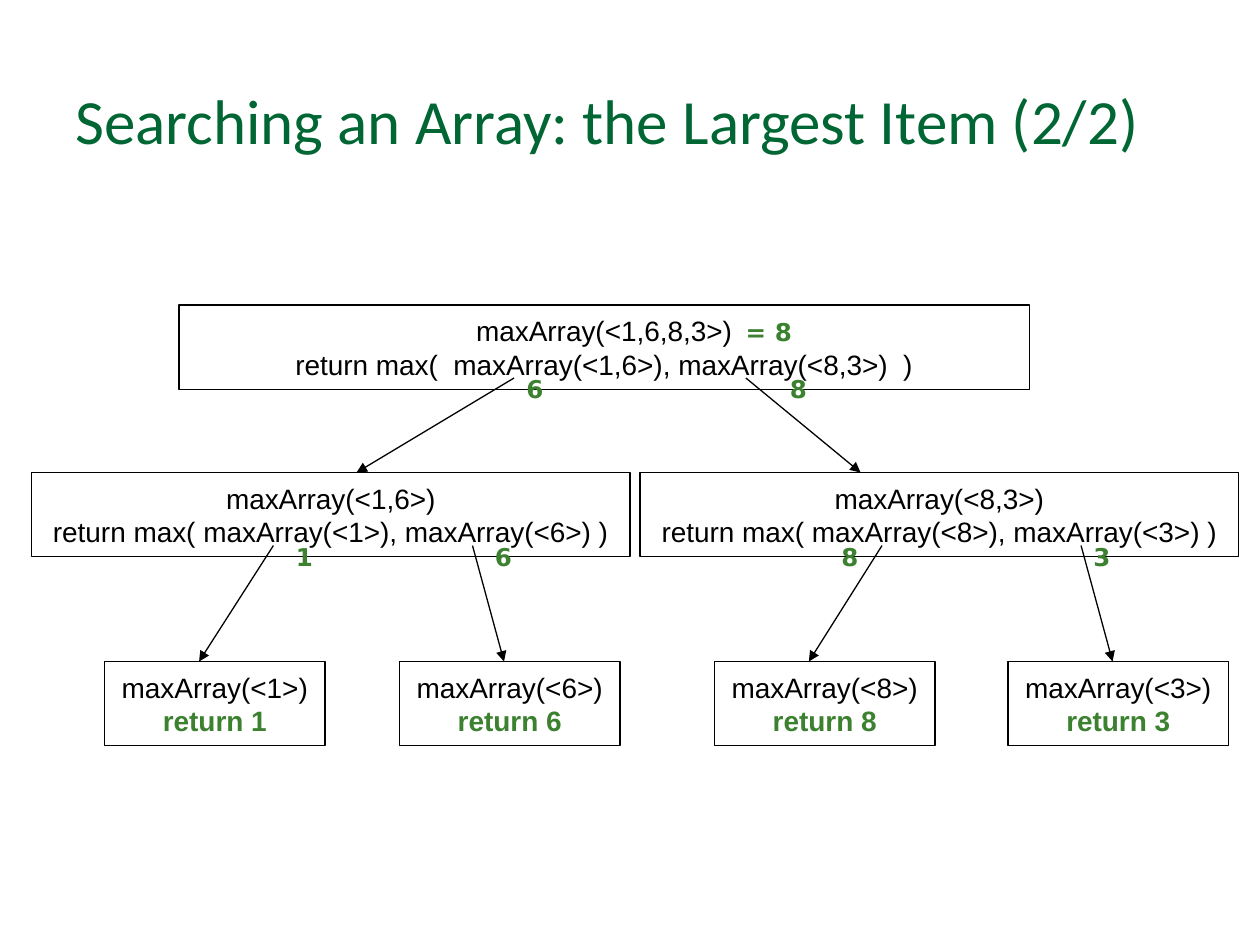
from lxml import etree
from pptx import Presentation
from pptx.dml.color import RGBColor
from pptx.enum import shapes, text
from pptx.oxml.ns import qn
from pptx.util import Inches, Pt

BLACK = RGBColor(0x00, 0x00, 0x00)
WHITE = RGBColor(0xFF, 0xFF, 0xFF)
TITLE_GREEN = RGBColor(0x00, 0x66, 0x33)
RESULT_GREEN = RGBColor(0x3B, 0x81, 0x2F)

BOX_HEIGHT = 0.67
ROOT_TOP, HALVES_TOP, LEAVES_TOP = 2.42, 3.75, 5.25


def add_run(paragraph, wording, font, size, color, bold=False):
    run = paragraph.add_run()
    run.text = wording
    run.font.name = font
    run.font.size = Pt(size)
    run.font.color.rgb = color
    run.font.bold = bold


def add_call_box(left, top, width, call, result, is_leaf=False):
    """Draw one recursive call: the call above the value it returns."""
    box = slide.shapes.add_shape(
        shapes.MSO_SHAPE.RECTANGLE,
        Inches(left), Inches(top), Inches(width), Inches(BOX_HEIGHT))
    box.shadow.inherit = False
    box.fill.solid()
    box.fill.fore_color.rgb = WHITE
    box.line.color.rgb = BLACK
    box.line.width = Pt(0.75)
    frame = box.text_frame
    frame.word_wrap = False
    frame.vertical_anchor = text.MSO_ANCHOR.MIDDLE
    call_line, result_line = frame.paragraphs[0], frame.add_paragraph()
    call_line.alignment = result_line.alignment = text.PP_ALIGN.CENTER
    add_run(call_line, call, "Arial", 16, BLACK)
    add_run(result_line, result, "Arial", 16,
            RESULT_GREEN if is_leaf else BLACK, is_leaf)


prs = Presentation()
prs.slide_width, prs.slide_height = Inches(10), Inches(7.5)
slide = prs.slides.add_slide(prs.slide_layouts[6])

title = slide.shapes.add_textbox(Inches(0.5), Inches(0.6), Inches(9), Inches(0.92))
title.text_frame.word_wrap = True
add_run(title.text_frame.paragraphs[0],
        "Searching an Array: the Largest Item (2/2)", "Calibri", 36, TITLE_GREEN)

# Call tree, from the whole array down to single items
add_call_box(1.42, ROOT_TOP, 6.75, "maxArray(<1,6,8,3>)",
             "return max(  maxArray(<1,6>), maxArray(<8,3>)  )")
for left, first, second in [(0.25, 1, 6), (5.08, 8, 3)]:
    add_call_box(left, HALVES_TOP, 4.75, f"maxArray(<{first},{second}>)",
                 f"return max( maxArray(<{first}>), maxArray(<{second}>) )")
for left, item in [(0.83, 1), (3.17, 6), (5.67, 8), (8, 3)]:
    add_call_box(left, LEAVES_TOP, 1.75, f"maxArray(<{item}>)",
                 f"return {item}", is_leaf=True)

# Arrows from each call to the call it makes
call_levels = [
    (3, HALVES_TOP, [(4.08, 2.83), (5.92, 6.83)]),
    (4.33, LEAVES_TOP, [(2.17, 1.58), (3.75, 4), (7, 6.42), (8.58, 8.83)]),
]
for start_y, end_y, calls in call_levels:
    for start_x, end_x in calls:
        arrow = slide.shapes.add_connector(
            shapes.MSO_CONNECTOR.STRAIGHT,
            Inches(start_x), Inches(start_y), Inches(end_x), Inches(end_y))
        arrow.line.color.rgb = BLACK
        arrow.line.width = Pt(0.75)
        etree.SubElement(arrow.line._get_or_add_ln(), qn("a:tailEnd"), type="triangle")
        etree.SubElement(arrow._element.spPr, qn("a:effectLst"))

# Values handed back up the tree
returned_values = [
    (4.08, 2.92, 0.34, "6"), (6.17, 2.92, 0.34, "8"), (5.82, 2.47, 0.57, "= 8"),
    (2.25, 4.25, 0.34, "1"), (3.83, 4.25, 0.34, "6"),
    (6.58, 4.25, 0.34, "8"), (8.58, 4.25, 0.34, "3"),
]
for left, top, width, value in returned_values:
    label = slide.shapes.add_textbox(Inches(left), Inches(top), Inches(width), Inches(0.33))
    label.text_frame.word_wrap = False
    label.text_frame.auto_size = text.MSO_AUTO_SIZE.SHAPE_TO_FIT_TEXT
    add_run(label.text_frame.paragraphs[0], value, "DejaVu Sans", 14, RESULT_GREEN, True)

prs.save("out.pptx")
